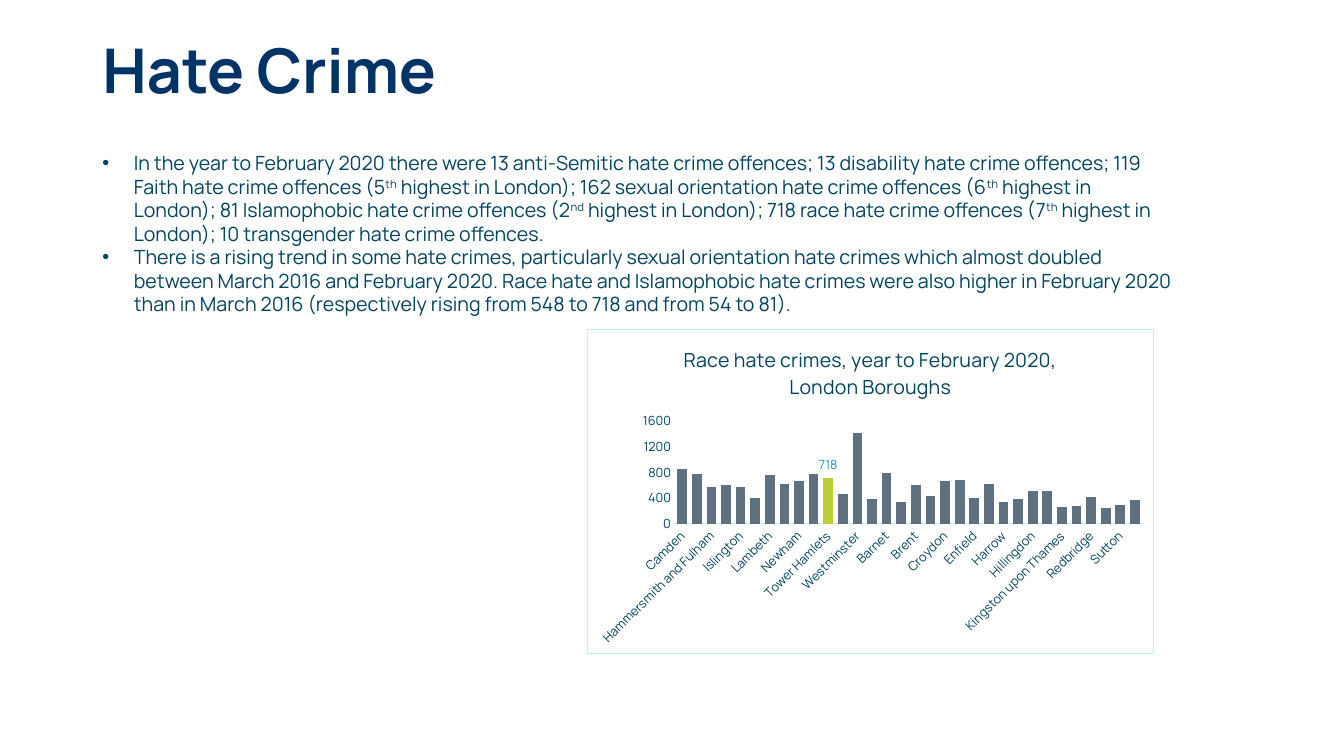
from lxml.etree import SubElement
from pptx import Presentation
from pptx.chart.data import CategoryChartData
from pptx.dml.color import RGBColor
from pptx.enum.chart import XL_CHART_TYPE, XL_LABEL_POSITION, XL_TICK_MARK
from pptx.enum.text import MSO_ANCHOR
from pptx.oxml import parse_xml
from pptx.oxml.ns import nsdecls, qn
from pptx.util import Pt

COLOURS = {
    "title": "003366",
    "text": "00445E",
    "bar": "5F7180",
    "tower_hamlets": "BBD034",
    "label": "1E96C8",
    "border": "C1EEFF",
    "background": "FFFFFF",
}
FONT = "Manrope"

statements = [
    [
        "In the year to February 2020 there were 13 anti-Semitic hate crime offences; "
        "13 disability hate crime offences; 119 Faith hate crime offences (5",
        "th",
        " highest in London); 162 sexual orientation hate crime offences (6",
        "th",
        " highest in London); 81 Islamophobic hate crime offences (2",
        "nd",
        " highest in London); 718 race hate crime offences (7",
        "th",
        " highest in London); 10 transgender hate crime offences.",
    ],
    [
        "There is a rising trend in some hate crimes, particularly sexual orientation "
        "hate crimes which almost doubled between March 2016 and February 2020. Race "
        "hate and Islamophobic hate crimes were also higher in February 2020 than in "
        "March 2016 (respectively rising from 548 to 718 and from 54 to 81).",
    ],
]

race_hate_crimes = {
    "Camden": 851, "Hackney": 774, "Hammersmith and Fulham": 575, "Haringey": 604,
    "Islington": 569, "Kensington and Chelsea": 397, "Lambeth": 754, "Lewisham": 612,
    "Newham": 659, "Southwark": 767, "Tower Hamlets": 718, "Wandsworth": 463,
    "Westminster": 1406, "Barking and Dagenham": 388, "Barnet": 797, "Bexley": 337,
    "Brent": 603, "Bromley": 438, "Croydon": 667, "Ealing": 680, "Enfield": 401,
    "Greenwich": 623, "Harrow": 333, "Havering": 381, "Hillingdon": 516,
    "Hounslow": 506, "Kingston upon Thames": 265, "Merton": 284, "Redbridge": 417,
    "Richmond upon Thames": 245, "Sutton": 298, "Waltham Forest": 364,
}


def set_font(font, size, colour, bold=False):
    font.name = FONT
    font.size = Pt(size)
    font.bold = bold
    font.color.rgb = RGBColor.from_string(COLOURS[colour])


def add_text(paragraph, text, size=14, colour="text", bold=False, raised=False):
    run = paragraph.add_run()
    run.text = text
    set_font(run.font, size, colour, bold)
    if raised:
        run.font._element.set("baseline", "30000")


presentation = Presentation()
presentation.slide_width = Pt(960)
presentation.slide_height = Pt(540)
slide = presentation.slides.add_slide(presentation.slide_layouts[6])

heading = slide.shapes.add_textbox(Pt(66), Pt(0), Pt(769), Pt(104.4)).text_frame
heading.word_wrap = True
heading.vertical_anchor = MSO_ANCHOR.MIDDLE
heading.paragraphs[0].line_spacing = 0.9
add_text(heading.paragraphs[0], "Hate Crime", size=44, colour="title", bold=True)

summary = slide.shapes.add_textbox(Pt(66), Pt(104.4), Pt(782), Pt(126)).text_frame
summary.word_wrap = True
for number, statement in enumerate(statements):
    paragraph = summary.add_paragraph() if number else summary.paragraphs[0]
    properties = paragraph._p.get_or_add_pPr()
    properties.set("marL", str(Pt(22.5)))
    properties.set("indent", str(-Pt(22.5)))
    SubElement(properties, qn("a:buFont"), typeface="Arial")
    SubElement(properties, qn("a:buChar"), char="•")
    for position, part in enumerate(statement):
        add_text(paragraph, part, raised=position % 2 == 1)

borough_data = CategoryChartData()
borough_data.categories = list(race_hate_crimes)
borough_data.add_series("Series 1", list(race_hate_crimes.values()))
chart = slide.shapes.add_chart(
    XL_CHART_TYPE.COLUMN_CLUSTERED, Pt(419), Pt(234.7), Pt(405.4), Pt(232.6), borough_data
).chart
set_font(chart.font, 10, "text")
chart.has_legend = False
chart.has_title = True
chart_title = chart.chart_title.text_frame.paragraphs[0]
add_text(chart_title, "Race hate crimes, year to February 2020, London Boroughs")

boroughs = chart.category_axis
offences = chart.value_axis
for axis in (boroughs, offences):
    axis.major_tick_mark = XL_TICK_MARK.NONE
    axis.minor_tick_mark = XL_TICK_MARK.NONE
    axis.has_major_gridlines = False
    set_font(axis.tick_labels.font, 9, "text")
boroughs.format.line.color.rgb = RGBColor.from_string(COLOURS["border"])
boroughs.format.line.width = Pt(0.75)
boroughs._element.find(qn("c:txPr")).find(qn("a:bodyPr")).set("rot", "-2700000")
boroughs._element.find(qn("c:noMultiLvlLbl")).addprevious(
    parse_xml(f'<c:tickLblSkip {nsdecls("c")} val="2"/>')
)
offences.format.line.fill.background()
offences.minimum_scale = 0
offences.maximum_scale = 1600
offences.major_unit = 400

plot = chart.plots[0]
plot.gap_width = 50
plot.overlap = -27
plot.vary_by_categories = False
bars = plot.series[0]
bars.format.fill.solid()
bars.format.fill.fore_color.rgb = RGBColor.from_string(COLOURS["bar"])
tower_hamlets = bars.points[list(race_hate_crimes).index("Tower Hamlets")]
tower_hamlets.format.fill.solid()
tower_hamlets.format.fill.fore_color.rgb = RGBColor.from_string(COLOURS["tower_hamlets"])
tower_hamlets.data_label.position = XL_LABEL_POSITION.OUTSIDE_END
set_font(tower_hamlets.data_label.font, 9, "label")

plot_area = chart._chartSpace.chart.plotArea
for layout in plot_area.findall(qn("c:layout")):
    plot_area.remove(layout)
plot_area.insert(0, parse_xml(
    f'<c:layout {nsdecls("c")}><c:manualLayout><c:layoutTarget val="inner"/>'
    '<c:xMode val="edge"/><c:yMode val="edge"/><c:x val="0.155"/><c:y val="0.283"/>'
    '<c:w val="0.825"/><c:h val="0.317"/></c:manualLayout></c:layout>'
))
chart._chartSpace.chart.addnext(parse_xml(
    f'<c:spPr {nsdecls("c", "a")}>'
    f'<a:solidFill><a:srgbClr val="{COLOURS["background"]}"/></a:solidFill>'
    f'<a:ln w="{Pt(0.75)}"><a:solidFill><a:srgbClr val="{COLOURS["border"]}"/>'
    '</a:solidFill></a:ln></c:spPr>'
))

presentation.save("out.pptx")
